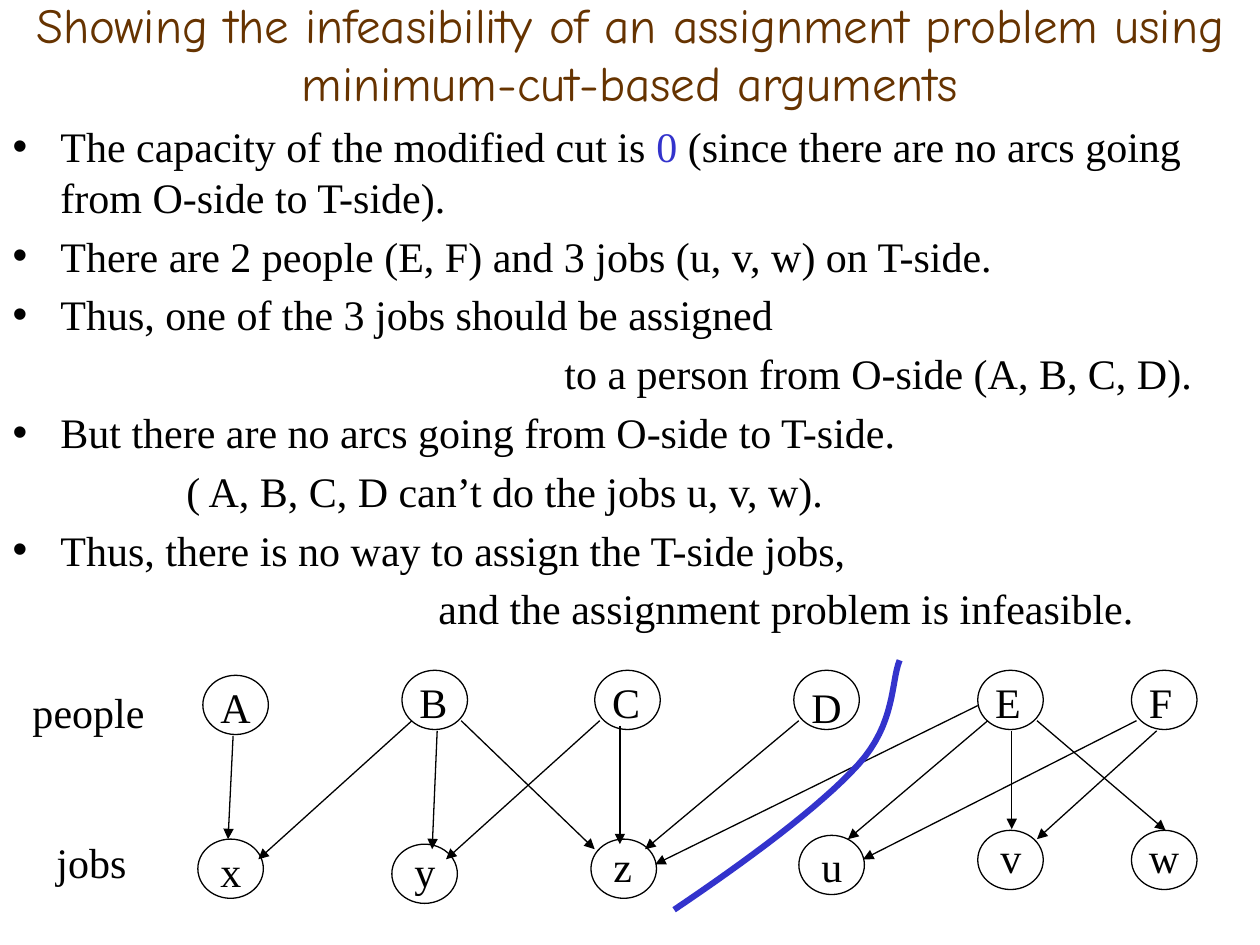
from dataclasses import dataclass

from lxml.etree import SubElement
from pptx import Presentation
from pptx.dml.color import RGBColor as RGB
from pptx.enum.shapes import MSO_CONNECTOR as CONN, MSO_SHAPE as SHAPE
from pptx.enum.text import MSO_ANCHOR as ANCHOR, MSO_AUTO_SIZE as AUTO, PP_ALIGN as ALIGN
from pptx.oxml.ns import qn
from pptx.util import Inches, Pt


@dataclass(frozen=True)
class Theme:
    ink: RGB = RGB.from_string("000000")
    paper: RGB = RGB.from_string("FFFFFF")
    accent: RGB = RGB.from_string("3333CC")
    heading: RGB = RGB.from_string("663300")
    title_font: str = "Comic Neue"
    body_font: str = "Times New Roman"
    title_size: int = 28
    body_size: int = 24
    thin: float = 0.75
    thick: float = 3.5


COLS, ROWS = 100, 75
NODE_W, NODE_H = 5.2, 4.7
HANG = 0.38
TITLE = "Showing the infeasibility of an assignment problem using minimum-cut-based arguments"
BODY = [
    (None, ["The capacity of the modified cut is ", "0 ",
            "(since there are no arcs going from O-side to T-side)."]),
    (None, ["There are 2 people (E, F) and 3 jobs (u, v, w) on T-side."]),
    (None, ["Thus, one of the 3 jobs should be assigned"]),
    (4, ["to a person from O-side (A, B, C, D)."]),
    (None, ["But there are no arcs going from O-side to T-side."]),
    (1, ["( A, B, C, D can’t do the jobs u, v, w)."]),
    (None, ["Thus, there is no way to assign the T-side jobs,"]),
    (3, ["and the assignment problem is infeasible."]),
]
PEOPLE = {"A": (16.1, 53.6, 53.6), "B": (31.9, 53.2, 53.2), "C": (47.2, 53.2, 53.2),
          "D": (63, 53.2, 53.6), "E": (77.6, 53.2, 53.2), "F": (89.8, 53.2, 53.2)}
JOBS = {"x": (15.7, 66.6, 66.6), "y": (31.1, 67, 66.6), "z": (46.9, 66.6, 66.2),
        "u": (63.4, 66.3, 66.2), "v": (77.6, 65.9, 65.5), "w": (89.8, 65.9, 65.5)}
ARCS = [
    ((18.5, 58.4), (18.1, 66.6)),
    ((32.7, 57.2), (20.5, 68.2)),
    ((34.7, 58), (34.3, 67.4)),
    ((36.6, 57.2), (47.2, 67.4)),
    ((47.6, 57.2), (35.4, 68.2)),
    ((49.2, 57.6), (49.2, 67)),
    ((63.4, 57.2), (51.2, 67.4)),
    ((77.6, 56), (52, 68.6)),
    ((78.4, 57.2), (67.3, 66.6)),
    ((80.3, 58), (80.3, 65.8)),
    ((82.3, 57.2), (92.5, 65.9)),
    ((90.2, 57.2), (68.5, 68.2)),
    ((91.8, 58), (82.3, 66.6)),
]
CUT = [
    [(53.5, 72.2), (59.3, 68.3), (65.1, 64), (68.1, 60.7)],
    [(68.1, 60.7), (71.1, 57.4), (70.7, 54.1), (71.4, 52.4)],
]


def bezier(a, b, c, d, t):
    """Return the point at share t of a cubic curve."""
    u = 1 - t
    return tuple(u**3 * p + 3 * u * u * t * q + 3 * u * t * t * r + t**3 * s
                 for p, q, r, s in zip(a, b, c, d))


class Deck:
    """Draw styled elements on the current slide, placed by grid columns and rows."""

    def __init__(self, theme):
        self.theme = theme
        self.prs = Presentation()
        self.prs.slide_width, self.prs.slide_height = Inches(10), Inches(7.5)
        self.s = self.prs.slides.add_slide(self.prs.slide_layouts[1])

    def x(self, col):
        """Convert columns to a length."""
        return round(self.prs.slide_width * col / COLS)

    def y(self, row):
        """Convert rows to a length."""
        return round(self.prs.slide_height * row / ROWS)

    def box(self, col, row, w, h):
        """Convert a grid box to lengths."""
        return self.x(col), self.y(row), self.x(w), self.y(h)

    def place(self, sp, *box):
        """Move a placeholder to a grid box and return its text frame."""
        sp.left, sp.top, sp.width, sp.height = self.box(*box)
        sp.text_frame.auto_size = AUTO.NONE
        return sp.text_frame

    def style(self, p, name, size, color):
        """Set the font of a paragraph."""
        p.font.name, p.font.size = name, Pt(size)
        p.font.color.rgb = color

    def title(self, text):
        """Fill the title placeholder."""
        t = self.theme
        tf = self.place(self.s.shapes.title, 0, 0, 100, 8.4)
        tf.text, tf.vertical_anchor = text, ANCHOR.MIDDLE
        p = tf.paragraphs[0]
        p.alignment = ALIGN.CENTER
        self.style(p, t.title_font, t.title_size, t.heading)

    def body(self, items):
        """Fill the body placeholder with bullets and indented follow-on lines."""
        t = self.theme
        tf = self.place(self.s.placeholders[1], 0, 9.1, 100, 65.9)
        for i, (indent, texts) in enumerate(items):
            p = tf.add_paragraph() if i else tf.paragraphs[0]
            self.style(p, t.body_font, t.body_size, t.ink)
            for j, text in enumerate(texts):
                r = p.add_run()
                r.text = text
                if j == 1:
                    r.font.color.rgb = t.accent
            pPr = p._p.get_or_add_pPr()
            follow = indent is not None
            pPr.set("marL", str(Inches(HANG + (indent or 0))))
            pPr.set("indent", str(0 if follow else -Inches(HANG)))
            if follow:
                pPr.insert_element_before(pPr.makeelement(qn("a:buNone")), "a:tabLst", "a:defRPr")

    def label(self, text, col, row, w):
        """Add a plain text label."""
        t = self.theme
        tf = self.s.shapes.add_textbox(*self.box(col, row, w, 5)).text_frame
        tf.word_wrap, tf.text = True, text
        self.style(tf.paragraphs[0], t.body_font, t.body_size, t.ink)

    def circle(self, col, row):
        """Add an empty node."""
        sp = self.s.shapes.add_shape(SHAPE.OVAL, *self.box(col, row, NODE_W, NODE_H))
        sp.shadow.inherit = False
        sp.fill.solid()
        sp.fill.fore_color.rgb = self.theme.paper
        self.stroke(sp.line, self.theme.ink, self.theme.thin)

    def stroke(self, line, color, width):
        """Set the colour and width of a line."""
        line.color.rgb, line.width = color, Pt(width)

    def arrow(self, start, end):
        """Add an arc with an arrowhead at its end."""
        ends = [f(v) for pt in (start, end) for f, v in zip((self.x, self.y), pt)]
        cn = self.s.shapes.add_connector(CONN.STRAIGHT, *ends)
        self.stroke(cn.line, self.theme.ink, self.theme.thin)
        SubElement(cn.line._get_or_add_ln(), qn("a:tailEnd"), type="triangle")
        SubElement(cn._element.spPr, qn("a:effectLst"))

    def curve(self, segments, steps=16):
        """Add a smooth open line through cubic segments."""
        pts = [bezier(*seg, i / steps) for seg in segments for i in range(1, steps + 1)]
        (x0, y0), *rest = [(self.x(c), self.y(r)) for c, r in [segments[0][0], *pts]]
        fb = self.s.shapes.build_freeform(x0, y0)
        fb.add_line_segments(rest, close=False)
        sp = fb.convert_to_shape()
        sp.shadow.inherit = False
        sp.fill.background()
        self.stroke(sp.line, self.theme.accent, self.theme.thick)


def main():
    """Build and save the slide."""
    deck = Deck(Theme())
    deck.title(TITLE)
    deck.body(BODY)
    deck.label("people", 1.6, 54, 13.4)
    deck.label("jobs", 3.5, 65.9, 8.7)
    for nodes, shift in ((PEOPLE, 0.4), (JOBS, 0.8)):
        for name, (col, row, label_row) in nodes.items():
            deck.circle(col, row)
            wide = name == "w"
            deck.label(name, col + (0.4 if wide else shift), label_row, 4.7 if wide else 3.9)
    for start, end in ARCS:
        deck.arrow(start, end)
    deck.curve(CUT)
    deck.prs.save("out.pptx")


if __name__ == "__main__":
    main()
